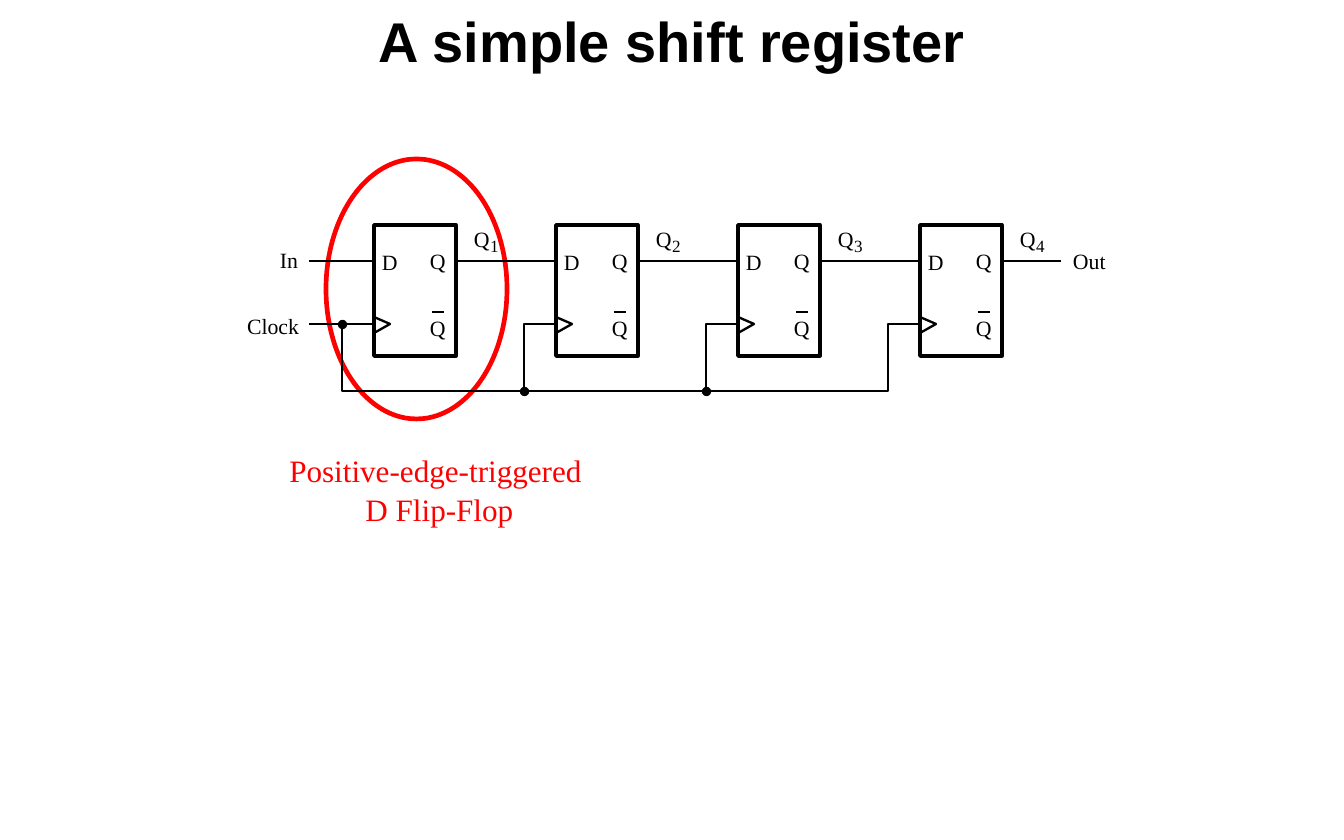
from dataclasses import dataclass

from lxml import etree
from pptx import Presentation
from pptx.dml.color import RGBColor
from pptx.enum.shapes import MSO_CONNECTOR, MSO_SHAPE
from pptx.enum.text import MSO_ANCHOR, MSO_AUTO_SIZE, PP_ALIGN
from pptx.oxml.ns import qn
from pptx.util import Emu, Inches, Pt

STRAIGHT = MSO_CONNECTOR.STRAIGHT
RECTANGLE, OVAL = MSO_SHAPE.RECTANGLE, MSO_SHAPE.OVAL
CENTER, LEFT = PP_ALIGN.CENTER, PP_ALIGN.LEFT
TOP, BOTTOM = MSO_ANCHOR.TOP, MSO_ANCHOR.BOTTOM
NO_AUTOFIT = MSO_AUTO_SIZE.NONE
SCALE = 914400 / 112
TITLE_ONLY = 5


@dataclass(frozen=True)
class Theme:
    ink: RGBColor = RGBColor(0, 0, 0)
    paper: RGBColor = RGBColor(255, 255, 255)
    accent: RGBColor = RGBColor(255, 0, 0)
    title_font: str = "Arial"
    body_font: str = "Times New Roman"
    title_size: int = 36
    caption_size: int = 20
    label_size: int = 14
    index_size: int = 11
    wire: float = 1.5
    border: float = 2.25
    ring: int = 3
    line_spacing: float = 1.06


@dataclass(frozen=True)
class Box:
    left: int
    top: int
    width: int
    height: int

    def inner(self, left, top, width, height):
        return Box(self.left + left, self.top + top, width, height)

    def point(self, x, y):
        return self.left + x, self.top + y

    def emu(self):
        return [px(n) for n in (self.left, self.top, self.width, self.height)]


THEME = Theme()


def px(length):
    return Emu(round(length * SCALE))


def style_paragraph(para, font, size, color, align):
    para.alignment = align
    para.font.name = font
    para.font.size = Pt(size)
    para.font.color.rgb = color


def add_label(page, box, text, size=THEME.label_size, color=THEME.ink, align=LEFT):
    frame = page.shapes.add_textbox(*box.emu()).text_frame
    frame.word_wrap = align == LEFT
    frame.vertical_anchor = TOP
    frame.margin_left = frame.margin_right = 0
    frame.margin_top = frame.margin_bottom = 0
    frame.text = text
    for para in frame.paragraphs:
        style_paragraph(para, THEME.body_font, size, color, align)
        para.line_spacing = THEME.line_spacing


def add_outline(page, kind, box, color, width, fill=None):
    shape = page.shapes.add_shape(kind, *box.emu())
    shape.shadow.inherit = False
    shape.line.color.rgb = color
    shape.line.width = Pt(width)
    if fill is None:
        shape.fill.background()
    else:
        shape.fill.solid()
        shape.fill.fore_color.rgb = fill


def add_line(page, start, end):
    line = page.shapes.add_connector(STRAIGHT, *map(px, start + end))
    line.line.color.rgb = THEME.ink
    line.line.width = Pt(THEME.wire)
    etree.SubElement(line._element.spPr, qn("a:effectLst"))


def add_path(page, *points):
    builder = page.shapes.build_freeform(*points[0], scale=SCALE)
    builder.add_line_segments(points[1:], close=False)
    path = builder.convert_to_shape()
    path.shadow.inherit = False
    path.fill.background()
    path.line.color.rgb = THEME.ink
    path.line.width = Pt(THEME.wire)


def add_junction(page, center):
    x, y = center
    dot = Box(x - 3, y - 3, 7, 7)
    add_outline(page, OVAL, dot, THEME.ink, THEME.wire, THEME.ink)


def add_title(page, box, text):
    title = page.shapes.title
    title.left, title.top, title.width, title.height = box.emu()
    frame = title.text_frame
    frame.auto_size = NO_AUTOFIT
    frame.vertical_anchor = BOTTOM
    frame.margin_bottom = px(1)
    frame.text = text
    para = frame.paragraphs[0]
    style_paragraph(para, THEME.title_font, THEME.title_size, THEME.ink, CENTER)
    para.font.bold = True


def add_flip_flop(page, box, index):
    add_outline(page, RECTANGLE, box, THEME.ink, THEME.border, THEME.paper)
    for text, left, top in (("D", 8, 22), ("Q", 56, 21), ("Q", 56, 88)):
        add_label(page, box.inner(left, top, 21, 27), text)
    add_line(page, box.point(58, 87), box.point(70, 87))
    add_path(page, box.point(0, 108), box.point(16, 99), box.point(0, 92))
    add_label(page, box.inner(100, -1, 21, 27), "Q")
    add_label(page, box.inner(116, 9, 13, 21), str(index), THEME.index_size)


def add_register(page, box, count=4):
    pitch, lead, tap = 182, 65, 32
    data, clock, bus = 36, 99, 166
    cells = [box.inner(lead + pitch * n, 0, 82, 131) for n in range(count)]
    for index, cell in enumerate(cells, 1):
        add_flip_flop(page, cell, index)
        reach = 100 if index < count else 59
        add_line(page, cell.point(cell.width, data), cell.point(cell.width + reach, data))

    add_line(page, box.point(0, data), box.point(lead, data))
    first, last = cells[0], cells[-1]
    add_path(page, box.point(0, clock), first.point(-tap, clock),
             first.point(-tap, bus), last.point(-tap, bus),
             last.point(-tap, clock), last.point(0, clock))
    add_line(page, first.point(-tap, clock), first.point(0, clock))
    add_junction(page, first.point(-tap, clock))
    for cell in cells[1:-1]:
        add_path(page, cell.point(-tap, bus), cell.point(-tap, clock), cell.point(0, clock))
        add_junction(page, cell.point(-tap, bus))

    add_label(page, box.inner(-29, 20, 24, 27), "In")
    add_label(page, box.inner(-62, 86, 58, 27), "Clock")
    add_label(page, box.inner(764, 21, 38, 27), "Out")


def add_callout(page, box):
    add_outline(page, OVAL, box, THEME.accent, THEME.ring)
    add_label(page, box.inner(-38, 290, 303, 75),
              "Positive-edge-triggered \nD Flip-Flop",
              THEME.caption_size, THEME.accent, CENTER)


def main():
    deck = Presentation()
    deck.slide_width, deck.slide_height = Inches(12), Inches(7.5)
    page = deck.slides.add_slide(deck.slide_layouts[TITLE_ONLY])
    add_title(page, Box(112, 0, 1120, 75), "A simple shift register")
    add_callout(page, Box(326, 159, 181, 260))
    add_register(page, Box(309, 225, 752, 166))
    deck.save("out.pptx")


if __name__ == "__main__":
    main()
